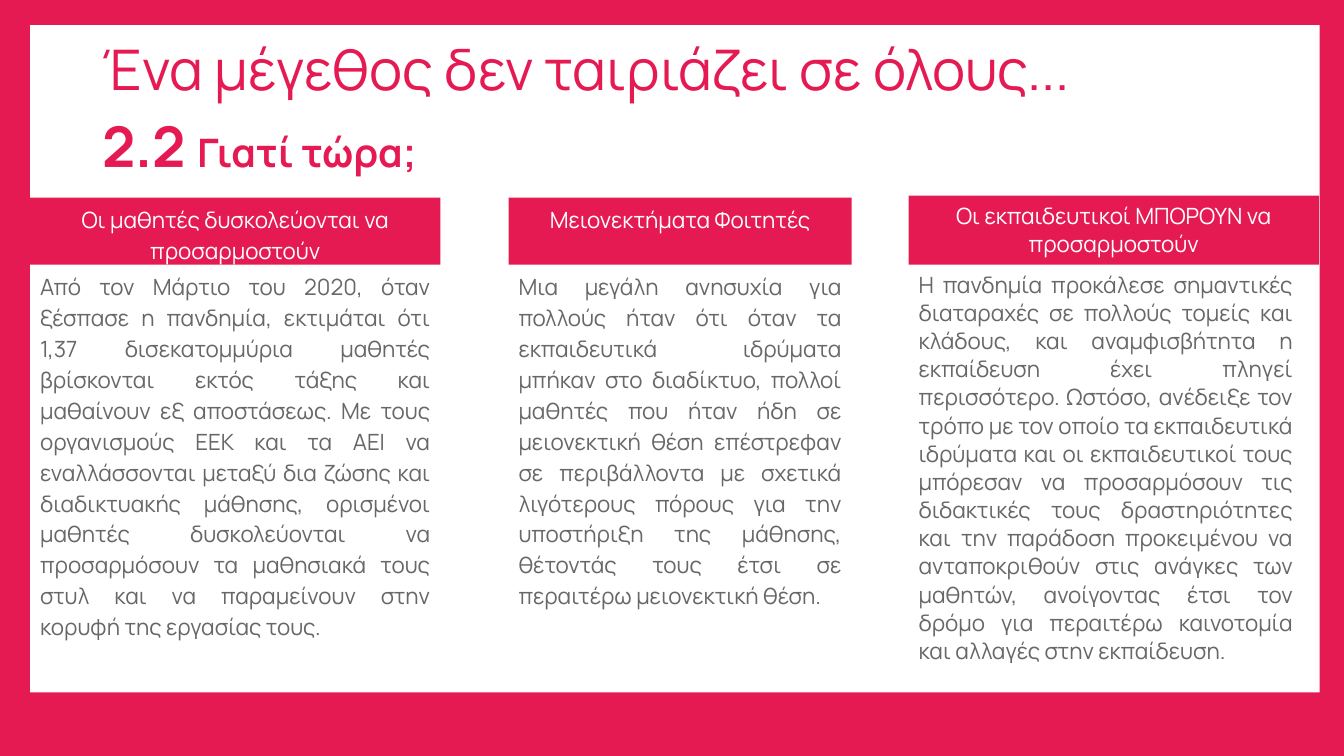
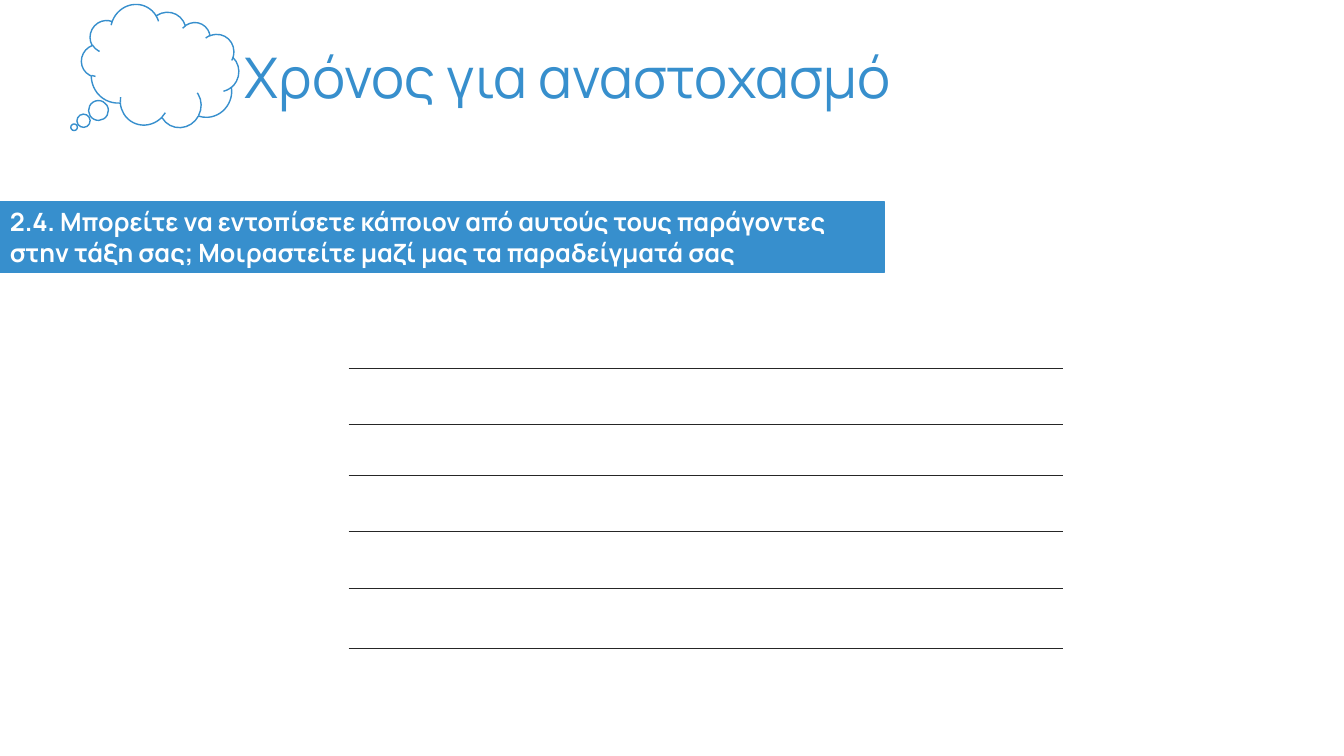
import pptx
import pptx.dml.color
import pptx.enum.shapes
import pptx.enum.text
import pptx.oxml.ns
import pptx.util
from dataclasses import dataclass

Pt = pptx.util.Pt
SHAPE = pptx.enum.shapes.MSO_SHAPE
ALIGN = pptx.enum.text.PP_ALIGN
ANCHOR = pptx.enum.text.MSO_ANCHOR


@dataclass(frozen=True)
class Theme:
    font: str = "Manrope"
    red: str = "E61A52"
    blue: str = "378FCD"
    white: str = "FFFFFF"
    grey: str = "676766"
    rule: str = "262626"
    title: float = 40
    subtitle: float = 28
    banner: float = 18
    body: float = 16


T = Theme()
WIDTH, HEIGHT = 960, 540

# Header, body, left, header top, column width, body width, line spacing
COLUMNS = [
    ("Οι μαθητές δυσκολεύονται να προσαρμοστούν",
     "Από τον Μάρτιο του 2020, όταν ξέσπασε η πανδημία, εκτιμάται ότι 1,37 "
     "δισεκατομμύρια μαθητές βρίσκονται εκτός τάξης και μαθαίνουν εξ αποστάσεως. "
     "Με τους οργανισμούς ΕΕΚ και τα ΑΕΙ να εναλλάσσονται μεταξύ δια ζώσης και "
     "διαδικτυακής μάθησης, ορισμένοι μαθητές δυσκολεύονται να προσαρμόσουν τα "
     "μαθησιακά τους στυλ και να παραμείνουν στην κορυφή της εργασίας τους.",
     21.6, 141.2, 293, 293, 1.15),
    ("Μειονεκτήματα Φοιτητές",
     "Μια μεγάλη ανησυχία για πολλούς ήταν ότι όταν τα εκπαιδευτικά ιδρύματα "
     "μπήκαν στο διαδίκτυο, πολλοί μαθητές που ήταν ήδη σε μειονεκτική θέση "
     "επέστρεφαν σε περιβάλλοντα με σχετικά λιγότερους πόρους για την υποστήριξη "
     "της μάθησης, θέτοντάς τους έτσι σε περαιτέρω μειονεκτική θέση.",
     363.3, 141.2, 245, 245, 1.15),
    ("Οι εκπαιδευτικοί ΜΠΟΡΟΥΝ να προσαρμοστούν",
     "Η πανδημία προκάλεσε σημαντικές διαταραχές σε πολλούς τομείς και κλάδους, "
     "και αναμφισβήτητα η εκπαίδευση έχει πληγεί περισσότερο. Ωστόσο, ανέδειξε "
     "τον τρόπο με τον οποίο τα εκπαιδευτικά ιδρύματα και οι εκπαιδευτικοί τους "
     "μπόρεσαν να προσαρμόσουν τις διδακτικές τους δραστηριότητες και την παράδοση "
     "προκειμένου να ανταποκριθούν στις ανάγκες των μαθητών, ανοίγοντας έτσι τον "
     "δρόμο για περαιτέρω καινοτομία και αλλαγές στην εκπαίδευση.",
     649.1, 139.8, 293, 281.5, 1.05),
]
COLUMN_SPLIT = 189

RULE_LEFT, RULE_RIGHT = 249, 759
RULE_TOPS = [262.8, 303.1, 339.8, 379.4, 420.5, 463]


def rgb(color):
    return pptx.dml.color.RGBColor.from_string(color)


def add_run(p, text, size, color, bold=False):
    r = p.add_run()
    r.text = text
    r.font.name, r.font.size, r.font.bold = T.font, Pt(size), bold
    r.font.color.rgb = rgb(color)


def write(sp, text, size=T.body, color=T.grey, bold=False, align=ALIGN.LEFT,
          spacing=1.0, anchor=ANCHOR.TOP):
    """Write text in a shape and return its paragraph."""
    tf = sp.text_frame
    tf.word_wrap = True
    tf.vertical_anchor = anchor
    p = tf.paragraphs[0]
    p.alignment, p.line_spacing = align, spacing
    add_run(p, text, size, color, bold)
    return p


def add_text(slide, box, text, **fmt):
    return write(slide.shapes.add_textbox(*map(Pt, box)), text, **fmt)


def add_box(slide, box, fill, line=None, weight=0.75, kind=SHAPE.RECTANGLE):
    sp = slide.shapes.add_shape(kind, *map(Pt, box))
    sp.shadow.inherit = False
    sp.fill.solid()
    sp.fill.fore_color.rgb = rgb(fill)
    if line:
        sp.line.color.rgb = rgb(line)
        sp.line.width = Pt(weight)
    else:
        sp.line.fill.background()
    return sp


def add_rule(slide, y):
    line = slide.shapes.add_connector(
        pptx.enum.shapes.MSO_CONNECTOR.STRAIGHT,
        Pt(RULE_LEFT), Pt(y), Pt(RULE_RIGHT), Pt(y))
    line.line.color.rgb = rgb(T.rule)
    line.line.width = Pt(0.5)
    sp_pr = line._element.spPr
    sp_pr.append(sp_pr.makeelement(pptx.oxml.ns.qn("a:effectLst"), {}))


def add_column(slide, header, body, left, top, width, body_width, spacing):
    add_text(slide, (left, COLUMN_SPLIT, body_width, 305), body,
             align=ALIGN.JUSTIFY, spacing=spacing)
    sp = add_box(slide, (left, top, width, COLUMN_SPLIT - top), T.red)
    write(sp, header, color=T.white, align=ALIGN.CENTER, spacing=spacing)


def build_why_now(slide):
    # Red frame around a white panel
    add_box(slide, (0, 0, WIDTH, HEIGHT), T.red)
    add_box(slide, (21.6, 18, 921, 476.6), T.white)
    # Title with numbered subtitle
    p = add_text(slide, (66.2, 14, 828, 120),
                 "Ένα μέγεθος δεν ταιριάζει σε όλους...",
                 size=T.title, color=T.red, spacing=1.15)
    p.add_line_break()
    add_run(p, "2.2 ", T.title, T.red, bold=True)
    add_run(p, "Γιατί τώρα;", T.subtitle, T.red, bold=True)
    # Three columns
    for column in COLUMNS:
        add_column(slide, *column)


def build_reflection(slide):
    # Title and thought cloud
    add_text(slide, (167.8, 5, 484, 104.4), "Χρόνος για αναστοχασμό",
             size=T.title, color=T.blue, spacing=0.9, anchor=ANCHOR.MIDDLE)
    cloud = add_box(slide, (58.3, 6.5, 110.9, 85), T.white, T.blue, 1,
                    SHAPE.CLOUD_CALLOUT)
    cloud.rotation = 27.8
    cloud.adjustments[0], cloud.adjustments[1] = -0.309, 0.77
    # Question banner
    banner = add_box(slide, (0, 144, 631.5, 51), T.blue, T.blue)
    write(banner, "2.4. Μπορείτε να εντοπίσετε κάποιον από αυτούς τους παράγοντες "
          "στην τάξη σας; Μοιραστείτε μαζί μας τα παραδείγματά σας",
          size=T.banner, color=T.white, bold=True)
    # Lines for the answer
    for y in RULE_TOPS:
        add_rule(slide, y)


def main():
    prs = pptx.Presentation()
    prs.slide_width, prs.slide_height = Pt(WIDTH), Pt(HEIGHT)
    for build in (build_why_now, build_reflection):
        build(prs.slides.add_slide(prs.slide_layouts[6]))
    prs.save("out.pptx")


if __name__ == "__main__":
    main()
